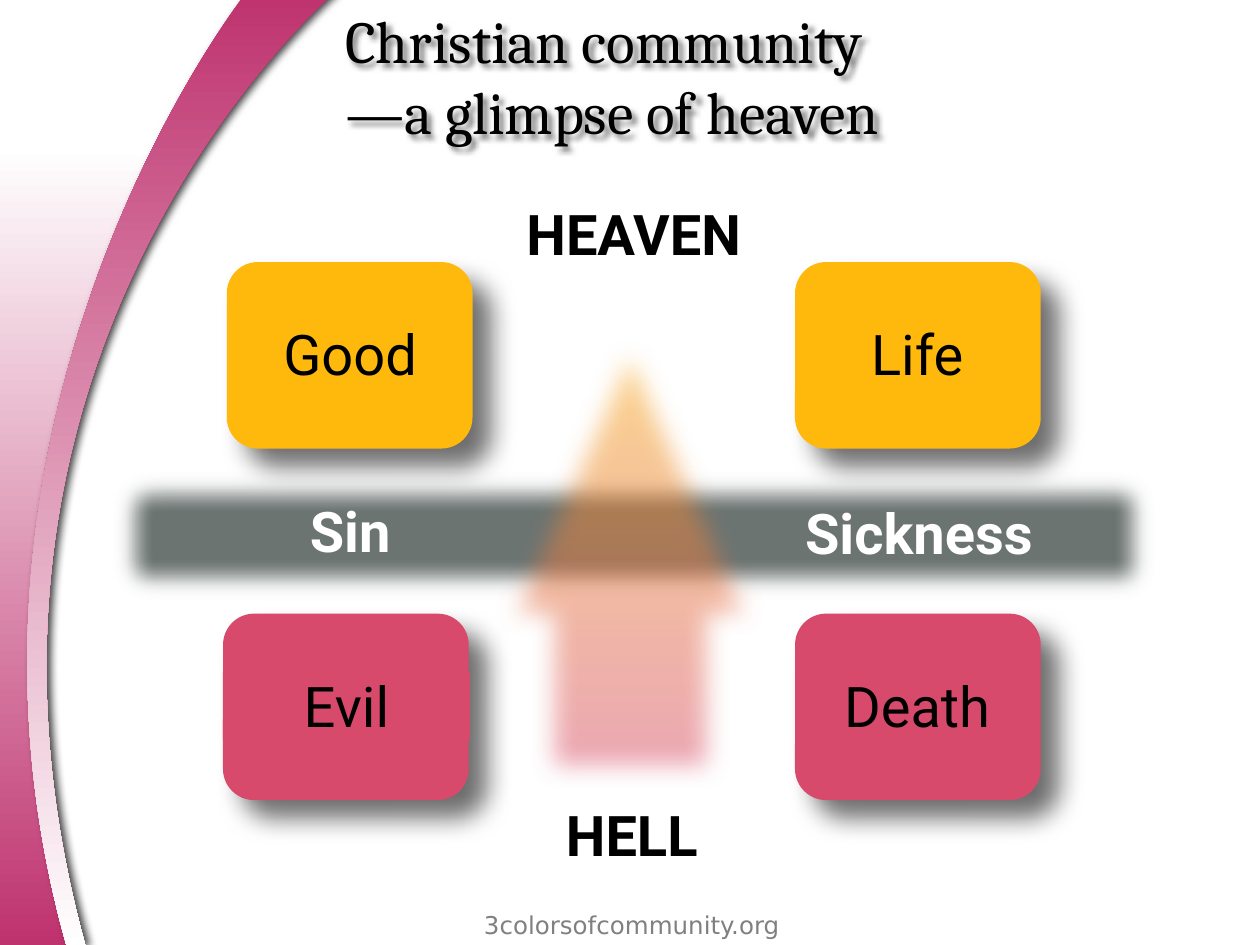
from lxml import etree
from pptx import Presentation, util as u
from pptx.dml.color import RGBColor
from pptx.enum import shapes, text
from pptx.oxml.ns import qn

THEME = {
    "black": "000000", "white": "FFFFFF", "grey": "808080", "bar": "6C7472",
    "plum": "BE326E", "rose": "D74A6C", "amber": "FFB90C",
    "title": {"name": "Cambria", "size": u.Pt(34)},
    "label": {"name": "Roboto", "size": u.Pt(32)},
    "footer": {"name": "DejaVu Sans", "size": u.Pt(14)},
}

# Content: wording and places (left, top, width, height in inches)
TITLE = ("Christian community\v—a glimpse of heaven", (2.64, 0, 7.36, 1.19))
FOOTER = ("3colorsofcommunity.org", (3.43, 7.17, 3.17, 0.33))
LABEL_HEIGHT = 0.54
HEADINGS = [  # wording, left, top, width, colour
    ("HEAVEN", 3.76, 1.58, 2.54, "black"),
    ("HELL", 3.73, 6.35, 2.57, "black"),
    ("Sickness", 6.33, 3.95, 1.93, "white"),
    ("Sin", 1.8, 3.94, 1.96, "white"),
]
CARD = (1.95, 1.48)
CARD_ROWS = [  # top, label top, colour, label filled, cards
    (2.08, 2.53, "amber", False,  # wording, left, label left, label width
     [("Good", 1.8, 1.8, 1.96), ("Life", 6.31, 6.3, 1.96)]),
    (4.87, 5.33, "rose", True,
     [("Evil", 1.77, 1.77, 1.96), ("Death", 6.31, 6.33, 1.9)]),
]
BAR = (0.83, 3.68, 8.4, 1.14)
ARROW = (3.74, 2.21, 2.52, 4.06)

# Each segment lists an end point, or two control points and an end point
WASH = [(0, 1.17), [(0.65, 1.17), (0.41, 1.17), (1.51, 1.17)],
        [(-0.35, 4.32), (0.5, 6.89), (0.65, 7.5)],
        [(0.32, 7.5), (0, 7.5), (0, 7.5)],
        [(-0.11, 6.44), (0, 1.17), (0, 1.17)]]
BAND = [(0.53, 7.51), [(0.61, 7.51), (0.68, 7.51), (0.68, 7.51)],
        [(-0.64, 2.73), (2.67, -0.07), (2.67, -0.07)], [(1.97, -0.08)],
        [(1.97, -0.08), (-0.67, 3.26), (0.53, 7.51)]]


def color(name):
    return RGBColor.from_string(THEME[name])


def inches(values):
    return [u.Inches(value) for value in values]


def apply(target, formats):
    for name, value in formats.items():
        setattr(target, name, value)


def add_child(parent, tag, **attributes):
    return etree.SubElement(parent, qn(tag), {k: str(v) for k, v in attributes.items()})


def add_shadow(effects, alpha, blur, distance, angle):
    shadow = add_child(effects, "a:outerShdw", blurRad=u.Pt(blur), dist=u.Pt(distance),
                       dir=angle * 60000, algn="tl", rotWithShape=0)
    tint = add_child(shadow, "a:srgbClr", val=THEME["black"])
    add_child(tint, "a:alpha", val=alpha * 1000)


def plain(shape):
    """Clear line and shadow; return the shape's effect list."""
    shape.line.fill.background()
    shape.shadow.inherit = False
    return shape._element.spPr.find(qn("a:effectLst"))


def solid(shape, name):
    shape.fill.solid()
    shape.fill.fore_color.rgb = color(name)


def gradient(shape, names, angle, alpha=None):
    shape.fill.gradient()
    shape.fill.gradient_angle = angle
    for stop, name in zip(shape.fill.gradient_stops, names):
        stop.color.rgb = color(name)
    if alpha:
        for tint in shape._element.spPr.iter(qn("a:srgbClr")):
            add_child(tint, "a:alpha", val=alpha * 1000)


def add_outline(page, outline):
    """Lay all points as a polygon, then turn each triple into a Bezier curve."""
    start, *segments = outline
    points = [inches(point) for segment in segments for point in segment]
    builder = page.shapes.build_freeform(*inches(start))
    builder.add_line_segments(points, close=True)
    shape = builder.convert_to_shape()
    lines = iter(list(shape._element.spPr.iter(qn("a:lnTo"))))
    for segment in segments:
        group = [next(lines) for _ in segment]
        if len(group) == 3:
            curve = etree.Element(qn("a:cubicBezTo"))
            group[0].addprevious(curve)
            for line in group:
                curve.append(line[0])
                line.getparent().remove(line)
    return shape


def add_text(parent, wording, place, font, ink, bold=False, frame=None, align=None):
    box = parent.add_textbox(*inches(place))
    apply(box.text_frame, {"word_wrap": True, **(frame or {})})
    para = box.text_frame.paragraphs[0]
    para.text = wording
    if align:
        para.alignment = align
    for span in para.runs:
        apply(span.font, {**THEME[font], "bold": bold})
        span.font.color.rgb = color(ink)
    return box


CENTER = text.PP_ALIGN.CENTER
MIDDLE = {"vertical_anchor": text.MSO_ANCHOR.MIDDLE}
TIGHT = {**MIDDLE, "auto_size": text.MSO_AUTO_SIZE.SHAPE_TO_FIT_TEXT,
         "margin_left": 0, "margin_right": 0, "margin_top": 0, "margin_bottom": 0}


def main():
    deck = Presentation()
    deck.slide_width, deck.slide_height = inches((10, 7.5))
    page = deck.slides.add_slide(deck.slide_layouts[6])
    kinds = shapes.MSO_SHAPE

    # Curved side decoration
    wash = add_outline(page, WASH)
    gradient(wash, ("white", "plum"), 270)
    plain(wash)
    band = add_outline(page, BAND)
    gradient(band, ("plum", "white"), 270)
    add_shadow(plain(band), 75, 5, 3, 0)

    # Title with a soft shadow, and footer
    title = add_text(page.shapes, *TITLE, "title", "black", frame=MIDDLE)
    add_shadow(plain(title), 50, 3, 3, 45)
    add_text(page.shapes, *FOOTER, "footer", "grey", align=CENTER)

    # Soft-edged barrier and the arrow rising through it
    barrier = page.shapes.add_shape(kinds.RECTANGLE, *inches(BAR))
    solid(barrier, "bar")
    add_child(plain(barrier), "a:softEdge", rad=u.Inches(0.2))
    arrow = page.shapes.add_shape(kinds.UP_ARROW, *inches(ARROW))
    arrow.adjustments[0], arrow.adjustments[1] = 0.63, 1.13
    gradient(arrow, ("rose", "amber"), 90, alpha=50)
    add_child(plain(arrow), "a:softEdge", rad=u.Inches(0.2))

    # Bold headings
    for wording, left, top, width, ink in HEADINGS:
        add_text(page.shapes, wording, (left, top, width, LABEL_HEIGHT),
                 "label", ink, True, TIGHT, CENTER)

    # Cards, one group per row
    for top, label_top, fill, filled, cards in CARD_ROWS:
        group = page.shapes.add_group_shape()
        for wording, left, label_left, label_width in cards:
            card = group.shapes.add_shape(kinds.ROUNDED_RECTANGLE,
                                          *inches((left, top, *CARD)))
            solid(card, fill)
            add_shadow(plain(card), 57, 15, 15, 45)
            label = add_text(group.shapes, wording,
                             (label_left, label_top, label_width, LABEL_HEIGHT),
                             "label", "black", frame=TIGHT, align=CENTER)
            if filled:
                solid(label, fill)

    deck.save("out.pptx")


if __name__ == "__main__":
    main()
